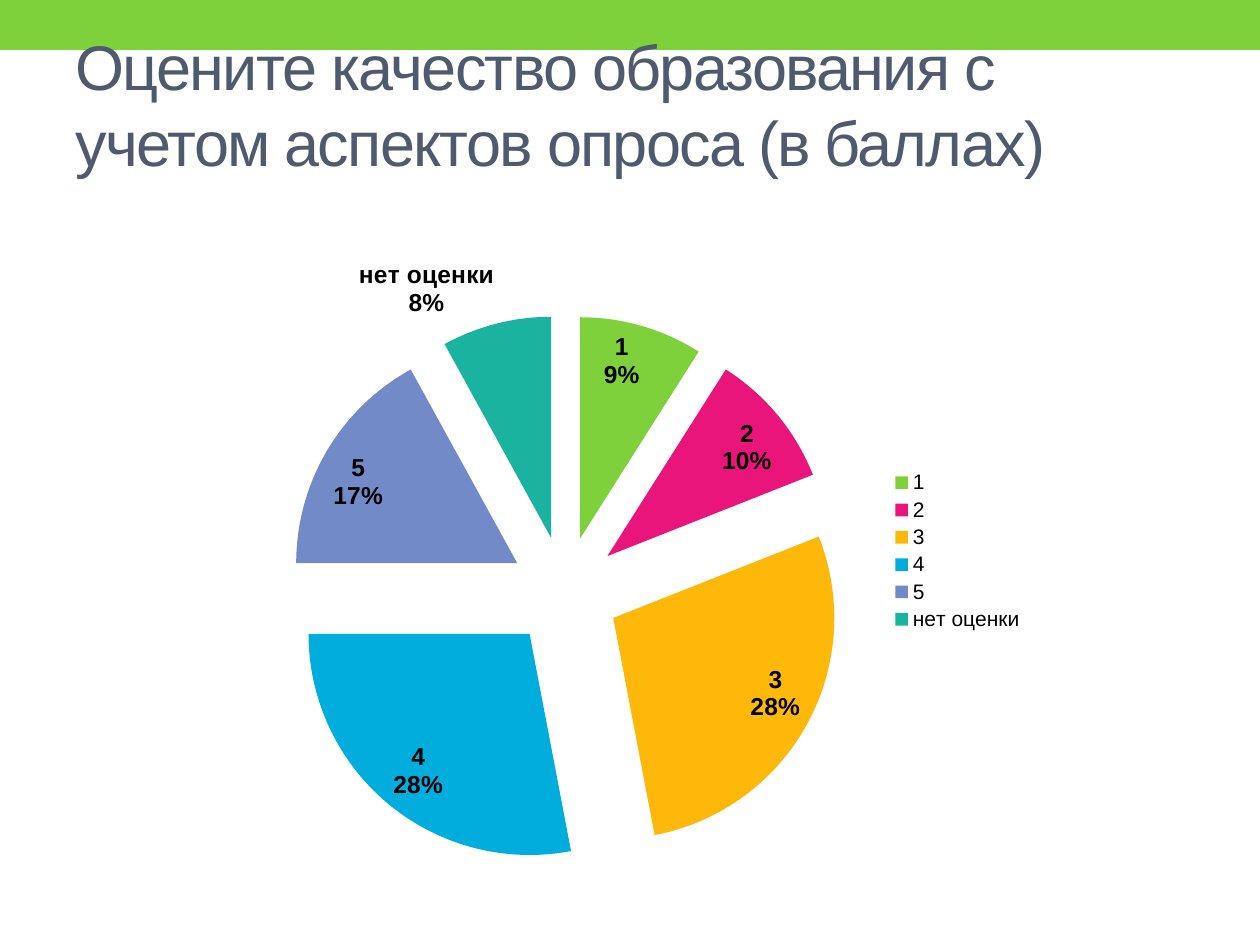
from lxml import etree
from pptx import Presentation
from pptx import util as u
from pptx.chart.data import CategoryChartData
from pptx.dml.color import RGBColor
from pptx.enum import chart as ch, shapes, text
from pptx.oxml.ns import qn

GREEN = RGBColor(0x7F, 0xD1, 0x3B)
PINK = RGBColor(0xEA, 0x15, 0x7A)
AMBER = RGBColor(0xFE, 0xB8, 0x0A)
CYAN = RGBColor(0x00, 0xAD, 0xDC)
BLUE = RGBColor(0x73, 0x8A, 0xC8)
TEAL = RGBColor(0x1A, 0xB3, 0x9F)
SLATE = RGBColor(0x4E, 0x5B, 0x6F)
BLACK = RGBColor(0, 0, 0)
FONT = "Arial"


def px(n):
    return u.Emu(round(n * 914400 / 126))


def style(font, size, color, bold=False):
    font.name = FONT
    font.size = u.Pt(size)
    font.color.rgb = color
    font.bold = bold


prs = Presentation()
prs.slide_width, prs.slide_height = px(1260), px(945)
s = prs.slides.add_slide(prs.slide_layouts[5])

band = s.shapes.add_shape(shapes.MSO_SHAPE.RECTANGLE, 0, 0, px(1260), px(50))
band.shadow.inherit = False
band.fill.solid()
band.fill.fore_color.rgb = GREEN
band.line.fill.background()
s.shapes._spTree.insert(2, band._element)

title = s.shapes.title
title.left, title.top, title.width, title.height = px(63), px(73), px(1134), px(136)
tf = title.text_frame
tf.word_wrap = True
tf.auto_size = text.MSO_AUTO_SIZE.NONE
tf.vertical_anchor = text.MSO_ANCHOR.MIDDLE
tf.text = "Оцените качество образования с учетом аспектов опроса (в баллах) \v"
p = tf.paragraphs[0]
p.alignment = text.PP_ALIGN.LEFT
style(p.font, 36, SLATE)
for r in p.runs:
    style(r.font, 36, SLATE)
    r.font._element.set("spc", "-100")

data = CategoryChartData(number_format="0%")
data.categories = ["1", "2", "3", "4", "5", "нет оценки"]
data.add_series("Series 1", [0.09, 0.1, 0.28, 0.28, 0.17, 0.08])
chart = s.shapes.add_chart(
    ch.XL_CHART_TYPE.PIE, px(263), px(214), px(774), px(674), data
).chart
style(chart.font, 10, BLACK)
chart.has_title = False
chart.has_legend = True
chart.legend.position = ch.XL_LEGEND_POSITION.RIGHT
chart.legend.include_in_layout = False
style(chart.legend.font, 12, BLACK)

plot = chart.plots[0]
plot.vary_by_categories = True
series = plot.series[0]
for i, color in enumerate([GREEN, PINK, AMBER, CYAN, BLUE, TEAL]):
    fill = series.points[i].format.fill
    fill.solid()
    fill.fore_color.rgb = color
explosion = etree.Element(qn("c:explosion"), val="25")
series._element.find(qn("c:dPt")).addprevious(explosion)

labels = series.data_labels
labels.show_value = True
labels.show_category_name = True
labels.number_format = "0%"
labels.number_format_is_linked = False
labels.position = ch.XL_LABEL_POSITION.INSIDE_END
style(labels.font, 14, BLACK, True)

outside = series.points[5].data_label
style(outside.font, 14, BLACK, True)
outside.position = ch.XL_LABEL_POSITION.OUTSIDE_END
dlbl = labels._element.find(qn("c:dLbl"))
dlbl.find(qn("c:showCatName")).set("val", "1")
dlbl.insert(1, etree.Element(qn("c:numFmt"), formatCode="0%", sourceLinked="0"))
for parent in (labels._element, dlbl):
    shown = [e for e in parent if e.tag.split("}")[1].startswith("show")]
    separator = etree.Element(qn("c:separator"))
    separator.text = "\n"
    last = [e for e in shown if e.tag != qn("c:showLeaderLines")][-1]
    last.addnext(separator)

area = chart._chartSpace.find(".//" + qn("c:plotArea"))
layout = area.find(qn("c:layout"))
if layout is None:
    layout = etree.Element(qn("c:layout"))
    area.insert(0, layout)
manual = etree.SubElement(layout, qn("c:manualLayout"))
for name, val in [("layoutTarget", "inner"), ("xMode", "edge"), ("yMode", "edge"),
                  ("x", "0.03"), ("y", "0.15"), ("w", "0.72"), ("h", "0.82")]:
    etree.SubElement(manual, qn("c:" + name), val=val)

prs.save("out.pptx")
